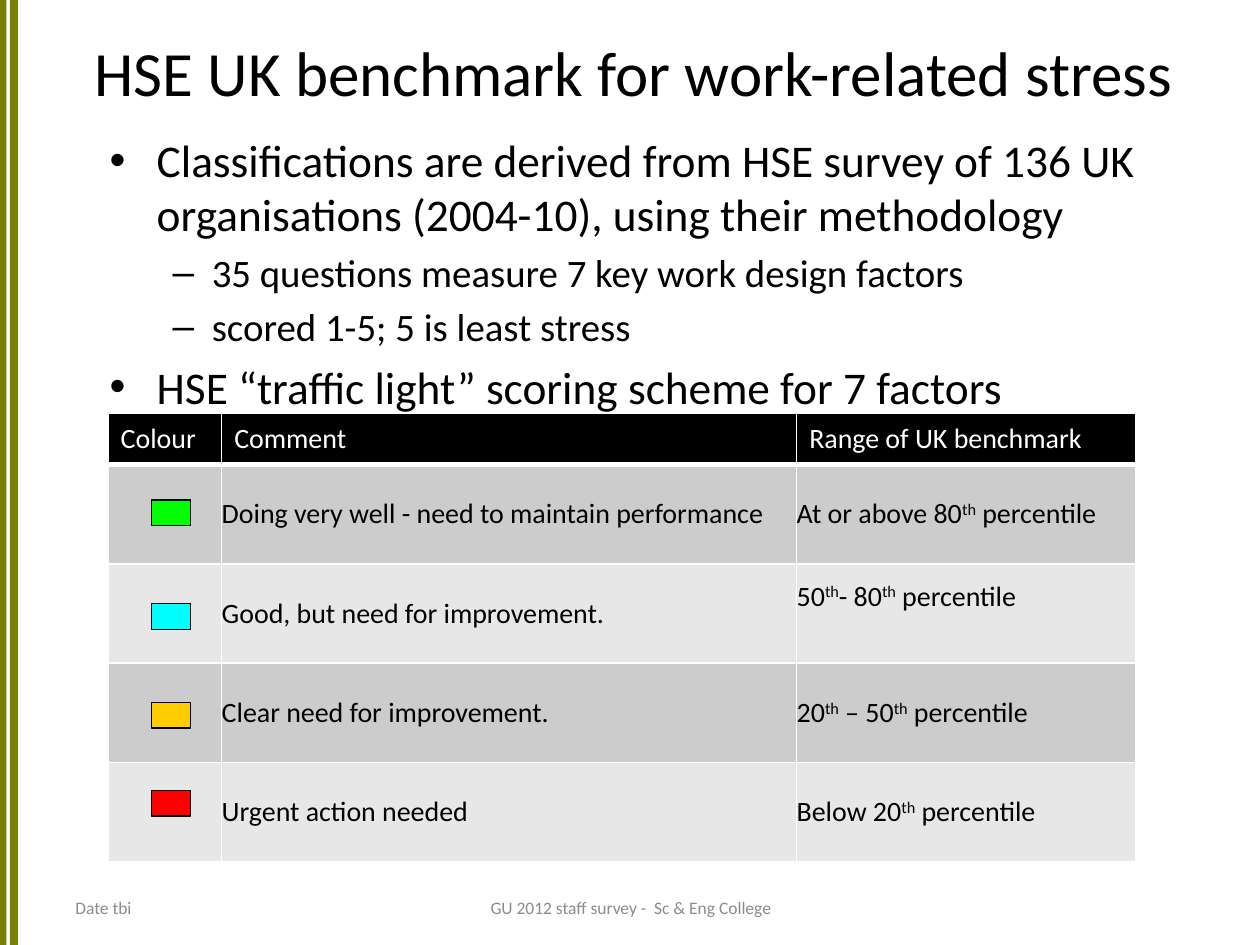
from lxml import etree
from pptx import Presentation
from pptx.dml.color import RGBColor
from pptx.enum.shapes import MSO_SHAPE as Shape
from pptx.enum.text import MSO_ANCHOR as Anchor, PP_ALIGN as Align
from pptx.oxml.ns import qn
from pptx.util import Cm, Pt

FONT = "Calibri"
COLOURS = {
    "olive": "778109", "black": "000000", "white": "FFFFFF", "footer": "8C8C8C",
    "dark band": "CCCCCC", "light band": "E7E7E7",
    "green": "00FF00", "cyan": "00FFFF", "amber": "FFCC00", "red": "FF0000",
}
BULLETS = [
    (0, "Classifications are derived from HSE survey of 136 UK organisations "
        "(2004-10), using their methodology"),
    (1, "35 questions measure 7 key work design factors"),
    (1, "scored 1-5; 5 is least stress"),
    (0, "HSE “traffic light” scoring scheme for 7 factors"),
]
# Per level: bullet sign, text size, text indent and hanging indent in cm
LEVELS = [("•", 25.9, 0.95, 0.95), ("–", 22.2, 2.06, 0.79)]
HEADINGS = ["Colour", "Comment", "Range of UK benchmark"]
# Superscripts stand between carets; the last value is the swatch top in cm
RATINGS = [
    ("green", "Doing very well - need to maintain performance",
     "At or above 80^th^ percentile", 10.08),
    ("cyan", "Good, but need for improvement.", "50^th^- 80^th^ percentile", 12.17),
    ("amber", "Clear need for improvement.", "20^th^ – 50^th^ percentile", 14.16),
    ("red", "Urgent action needed", "Below 20^th^ percentile", 15.93),
]


def rgb(name):
    return RGBColor.from_string(COLOURS[name])


def style_runs(paragraph, size, colour):
    for run in paragraph.runs:
        run.font.name = FONT
        run.font.size = Pt(size)
        run.font.bold = False
        run.font.color.rgb = rgb(colour)


def add_box(slide, left, top, width, height, fill, outline=None):
    box = slide.shapes.add_shape(
        Shape.RECTANGLE, Cm(left), Cm(top), Cm(width), Cm(height))
    box.shadow.inherit = False
    box.fill.solid()
    box.fill.fore_color.rgb = rgb(fill)
    if outline:
        box.line.color.rgb = rgb(outline)
        box.line.width = Pt(0.75)
    else:
        box.line.fill.background()


def add_frame(slide, left, top, width, height, anchor):
    frame = slide.shapes.add_textbox(
        Cm(left), Cm(top), Cm(width), Cm(height)).text_frame
    frame.word_wrap = True
    frame.vertical_anchor = anchor
    return frame


def add_line(slide, text, place, size, colour, align):
    frame = add_frame(slide, *place, Anchor.MIDDLE)
    frame.text = text
    frame.paragraphs[0].alignment = align
    style_runs(frame.paragraphs[0], size, colour)


def add_bullets(slide):
    frame = add_frame(slide, 1.96, 2.54, 21.49, 5.38, Anchor.TOP)
    frame.text = "\n".join(text for _, text in BULLETS)
    for paragraph, (level, _) in zip(frame.paragraphs, BULLETS):
        sign, size, indent, hanging = LEVELS[level]
        paragraph.level = level
        paragraph.space_before = Pt(round(size * 0.2, 1))
        style_runs(paragraph, size, "black")
        properties = paragraph._p.get_or_add_pPr()
        properties.set("marL", str(Cm(indent)))
        properties.set("indent", str(-Cm(hanging)))
        etree.SubElement(properties, qn("a:buFont"), typeface="Arial")
        etree.SubElement(properties, qn("a:buChar"), char=sign)


def set_borders(cell, bottom):
    properties = cell._tc.get_or_add_tcPr()
    for side, width in (("L", 1), ("R", 1), ("T", 1), ("B", bottom)):
        line = etree.SubElement(properties, qn(f"a:ln{side}"), w=str(Pt(width)))
        fill = etree.SubElement(line, qn("a:solidFill"))
        etree.SubElement(fill, qn("a:srgbClr"), val=COLOURS["white"])


def fill_cell(cell, text, fill, colour, bottom=1):
    set_borders(cell, bottom)
    cell.fill.solid()
    cell.fill.fore_color.rgb = rgb(fill)
    cell.vertical_anchor = Anchor.MIDDLE
    paragraph = cell.text_frame.paragraphs[0]
    for index, part in enumerate(text.split("^") if text else []):
        run = paragraph.add_run()
        run.text = part
        if index % 2:
            run.font._element.set("baseline", "30000")
    style_runs(paragraph, 16, colour)


def add_ratings_table(slide):
    table = slide.shapes.add_table(
        len(RATINGS) + 1, len(HEADINGS),
        Cm(2.18), Cm(8.34), Cm(20.72), Cm(9.03)).table
    table.horz_banding = False
    for column, width in zip(table.columns, (2.29, 11.59, 6.84)):
        column.width = Cm(width)
    for row, height in zip(table.rows, [1.03] + [2] * len(RATINGS)):
        row.height = Cm(height)

    for column, heading in enumerate(HEADINGS):
        fill_cell(table.cell(0, column), heading, "black", "white", bottom=3)
    for row, (_, comment, benchmark, _) in enumerate(RATINGS, 1):
        band = "dark band" if row % 2 else "light band"
        for column, text in enumerate(("", comment, benchmark)):
            cell = table.cell(row, column)
            fill_cell(cell, text, band, "black")
            cell.margin_left = cell.margin_right = 0
            cell.margin_top = cell.margin_bottom = 0
    # The second range sits above the middle of its row
    table.cell(2, 2).margin_bottom = Cm(0.69)


def main():
    deck = Presentation()
    deck.slide_width, deck.slide_height = Cm(25.4), Cm(19.05)
    slide = deck.slides.add_slide(deck.slide_layouts[6])

    for left, width in ((0.2, 0.16), (0, 0.13)):
        add_box(slide, left, 0, width, 19.05, "olive")
    add_line(slide, "HSE UK benchmark for work-related stress",
             (1.27, 0.33, 23.01, 2.21), 36, "black", Align.CENTER)
    add_bullets(slide)
    add_line(slide, "Date tbi", (1.27, 17.93, 5.92, 0.74),
             10, "footer", Align.LEFT)
    add_line(slide, "GU 2012 staff survey -  Sc & Eng College",
             (8.69, 17.93, 8.05, 0.74), 10, "footer", Align.CENTER)
    add_ratings_table(slide)
    for colour, _, _, top in RATINGS:
        add_box(slide, 3.05, top, 0.79, 0.52, colour, outline="black")

    deck.save("out.pptx")


if __name__ == "__main__":
    main()
